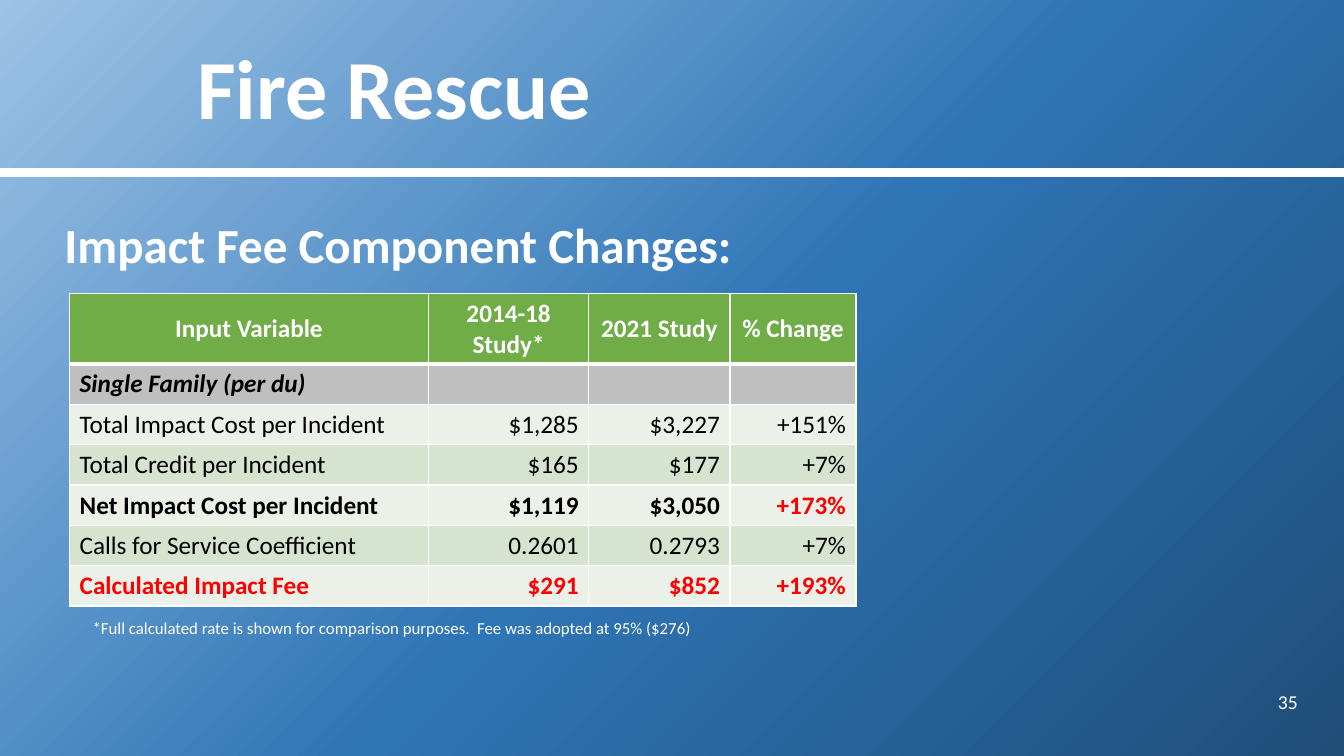
"""Build the Fire Rescue impact fee slide."""
from dataclasses import dataclass

from pptx import Presentation
from pptx import util as u
from pptx.dml.color import RGBColor
from pptx.enum import shapes, text
from pptx.oxml import parse_xml
from pptx.oxml.ns import nsdecls, qn

WHITE = RGBColor(0xFF, 0xFF, 0xFF)
BLACK = RGBColor(0x00, 0x00, 0x00)
RED = RGBColor(0xFF, 0x00, 0x00)
GREEN = RGBColor(0x70, 0xAD, 0x47)
GRAY = RGBColor(0xBF, 0xBF, 0xBF)
PALE = RGBColor(0xEB, 0xF1, 0xE9)
SAGE = RGBColor(0xD5, 0xE3, 0xCF)
SKY = RGBColor(0x9D, 0xC3, 0xE6)
BLUE = RGBColor(0x2E, 0x75, 0xB6)
NAVY = RGBColor(0x1F, 0x4E, 0x79)

LEFT, CENTER, RIGHT = text.PP_ALIGN.LEFT, text.PP_ALIGN.CENTER, text.PP_ALIGN.RIGHT
TOP, MIDDLE = text.MSO_ANCHOR.TOP, text.MSO_ANCHOR.MIDDLE
COLUMN_WIDTHS = (3.56, 1.59, 1.4, 1.25)


@dataclass(frozen=True)
class Label:
    """A text box with its place and format."""
    words: str
    box: tuple[float, float, float, float]
    size: int
    bold: bool = False
    align: text.PP_ALIGN = LEFT
    anchor: text.MSO_ANCHOR = TOP
    top_margin: float = 0.05


@dataclass(frozen=True)
class FeeRow:
    """A table row with its fill and font format."""
    values: tuple[str, str, str, str]
    fill: RGBColor
    color: RGBColor = BLACK
    change_color: RGBColor = BLACK
    bold: bool = False
    italic: bool = False


TITLE = Label("Fire Rescue", (1.86, 0, 11.1, 1.71), 60, True, anchor=MIDDLE)
LABELS = (
    Label("35", (12.08, 6.76, 0.89, 0.4), 14, align=RIGHT, anchor=MIDDLE),
    Label("Impact Fee Component Changes:", (0.54, 1.94, 12.42, 5.27), 35, True, top_margin=0.19),
    Label("*Full calculated rate is shown for comparison purposes.  Fee was adopted at 95% ($276)",
          (0.82, 6.08, 7.05, 0.3), 12),
)
ROWS = (
    FeeRow(("Input Variable", "2014-18 Study*", "2021 Study", "% Change"), GREEN, WHITE, WHITE, True),
    FeeRow(("Single Family (per du)", "", "", ""), GRAY, bold=True, italic=True),
    FeeRow(("Total Impact Cost per Incident", "$1,285", "$3,227", "+151%"), PALE),
    FeeRow(("Total Credit per Incident", "$165", "$177", "+7%"), SAGE),
    FeeRow(("Net Impact Cost per Incident", "$1,119", "$3,050", "+173%"), PALE, BLACK, RED, True),
    FeeRow(("Calls for Service Coefficient", "0.2601", "0.2793", "+7%"), SAGE),
    FeeRow(("Calculated Impact Fee", "$291", "$852", "+193%"), PALE, RED, RED, True),
)


def apply_format(font, color: RGBColor, **values) -> None:
    """Set the font attributes and colour."""
    for name, value in {"name": "Calibri", **values}.items():
        setattr(font, name, value)
    font.color.rgb = color


def paint_background(slide) -> None:
    """Fill the background with a gradient from the top left corner."""
    slide.background.fill.gradient()
    gradient = slide.element.find(".//" + qn("a:gradFill"))
    stops = "".join(f'<a:gs pos="{percent * 1000}"><a:srgbClr val="{color}"/></a:gs>'
                    for percent, color in ((0, SKY), (53, BLUE), (100, NAVY)))
    gradient.getparent().replace(gradient, parse_xml(
        f'<a:gradFill {nsdecls("a")} rotWithShape="1"><a:gsLst>{stops}</a:gsLst>'
        '<a:path path="circle"><a:fillToRect r="100000" b="100000"/></a:path></a:gradFill>'))


def add_rule(slide) -> None:
    """Draw the white line under the title."""
    rule = slide.shapes.add_connector(shapes.MSO_CONNECTOR.STRAIGHT, u.Inches(-0.02),
                                      u.Inches(1.71), u.Inches(13.33), u.Inches(1.71))
    rule.line.color.rgb = WHITE
    rule.line.width = u.Pt(6)
    rule.element.spPr.append(parse_xml(f'<a:effectLst {nsdecls("a")}/>'))


def add_label(slide, label: Label):
    """Add a text box and return its run."""
    frame = slide.shapes.add_textbox(*map(u.Inches, label.box)).text_frame
    settings = {"word_wrap": True, "vertical_anchor": label.anchor,
                "margin_top": u.Inches(label.top_margin)}
    for name, value in settings.items():
        setattr(frame, name, value)
    paragraph = frame.paragraphs[0]
    paragraph.alignment = label.align
    run = paragraph.add_run()
    run.text = label.words
    apply_format(run.font, WHITE, size=u.Pt(label.size), bold=label.bold)
    return run


def add_title(slide) -> None:
    """Add the title with its text shadow."""
    run = add_label(slide, TITLE)
    run.font.fill.solid()
    run.font.color.rgb = WHITE
    fill = run.font._element.find(qn("a:solidFill"))
    fill.addnext(parse_xml(
        f'<a:effectLst {nsdecls("a")}><a:outerShdw blurRad="50800" dist="50800" dir="2700000">'
        '<a:srgbClr val="000000"><a:alpha val="50000"/></a:srgbClr></a:outerShdw></a:effectLst>'))


def add_borders(cell, is_header: bool) -> None:
    """Give a cell white borders, thicker below the header."""
    properties = cell._tc.get_or_add_tcPr()
    for side in "LRTB":
        width = u.Pt(3 if is_header and side == "B" else 1)
        properties.append(parse_xml(
            f'<a:ln{side} {nsdecls("a")} w="{width}"><a:solidFill>'
            f'<a:srgbClr val="{WHITE}"/></a:solidFill></a:ln{side}>'))


def add_fee_table(slide) -> None:
    """Add the table of fee components."""
    table = slide.shapes.add_table(len(ROWS), len(COLUMN_WIDTHS), u.Inches(0.69), u.Inches(2.91),
                                   u.Inches(sum(COLUMN_WIDTHS)), u.Inches(3.1)).table
    for column, width in zip(table.columns, COLUMN_WIDTHS):
        column.width = u.Inches(width)
    for row_index, row in enumerate(ROWS):
        is_header = row_index == 0
        table.rows[row_index].height = u.Inches(0.7 if is_header else 0.4)
        for column_index, value in enumerate(row.values):
            cell = table.cell(row_index, column_index)
            add_borders(cell, is_header)
            cell.fill.solid()
            cell.fill.fore_color.rgb = row.fill
            cell.vertical_anchor = MIDDLE
            cell.text = value
            paragraph = cell.text_frame.paragraphs[0]
            paragraph.alignment = CENTER if is_header else RIGHT if column_index else LEFT
            is_change = column_index == len(COLUMN_WIDTHS) - 1
            apply_format(paragraph.runs[0].font if value else paragraph.font,
                         row.change_color if is_change else row.color,
                         size=u.Pt(18), bold=row.bold, italic=row.italic)


def main() -> None:
    """Build and save the presentation."""
    presentation = Presentation()
    presentation.slide_width = u.Inches(13.33)
    presentation.slide_height = u.Inches(7.5)
    slide = presentation.slides.add_slide(presentation.slide_layouts[6])
    paint_background(slide)
    add_rule(slide)
    for label in LABELS:
        add_label(slide, label)
    add_fee_table(slide)
    add_title(slide)
    presentation.save("out.pptx")


if __name__ == "__main__":
    main()
